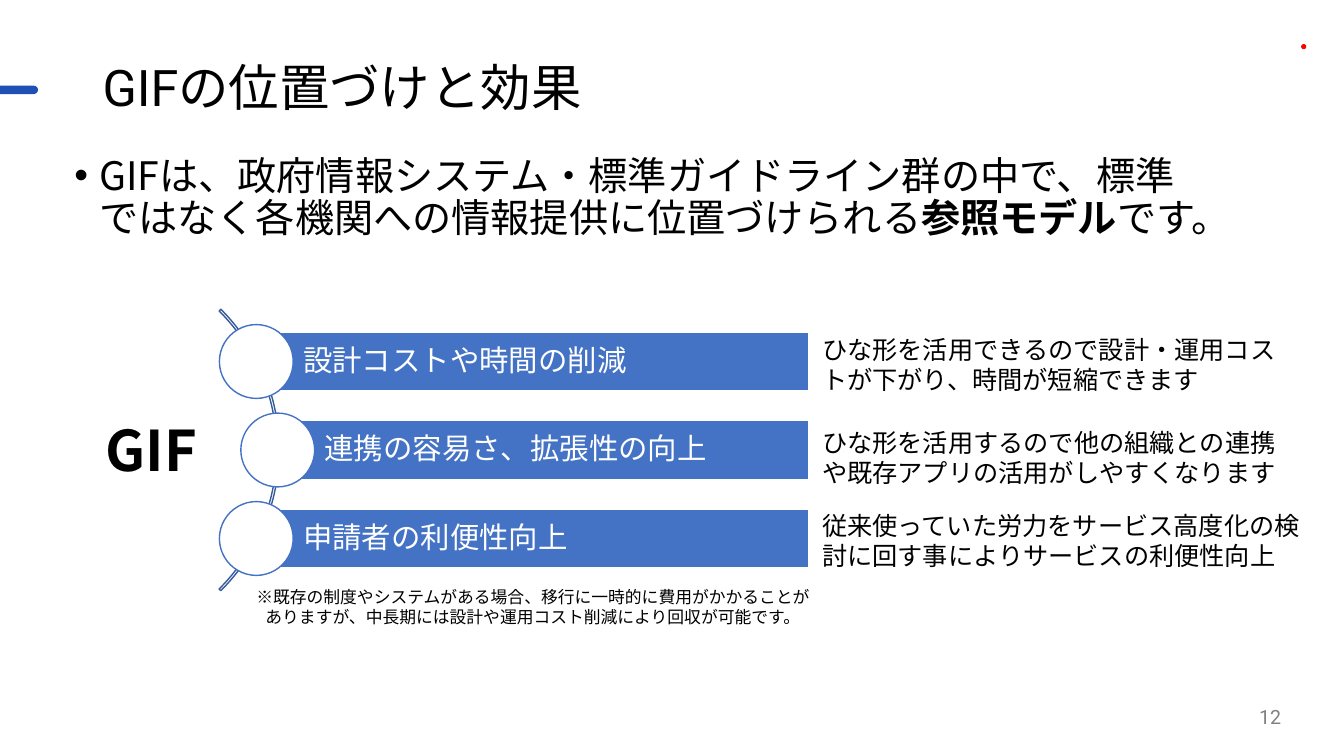
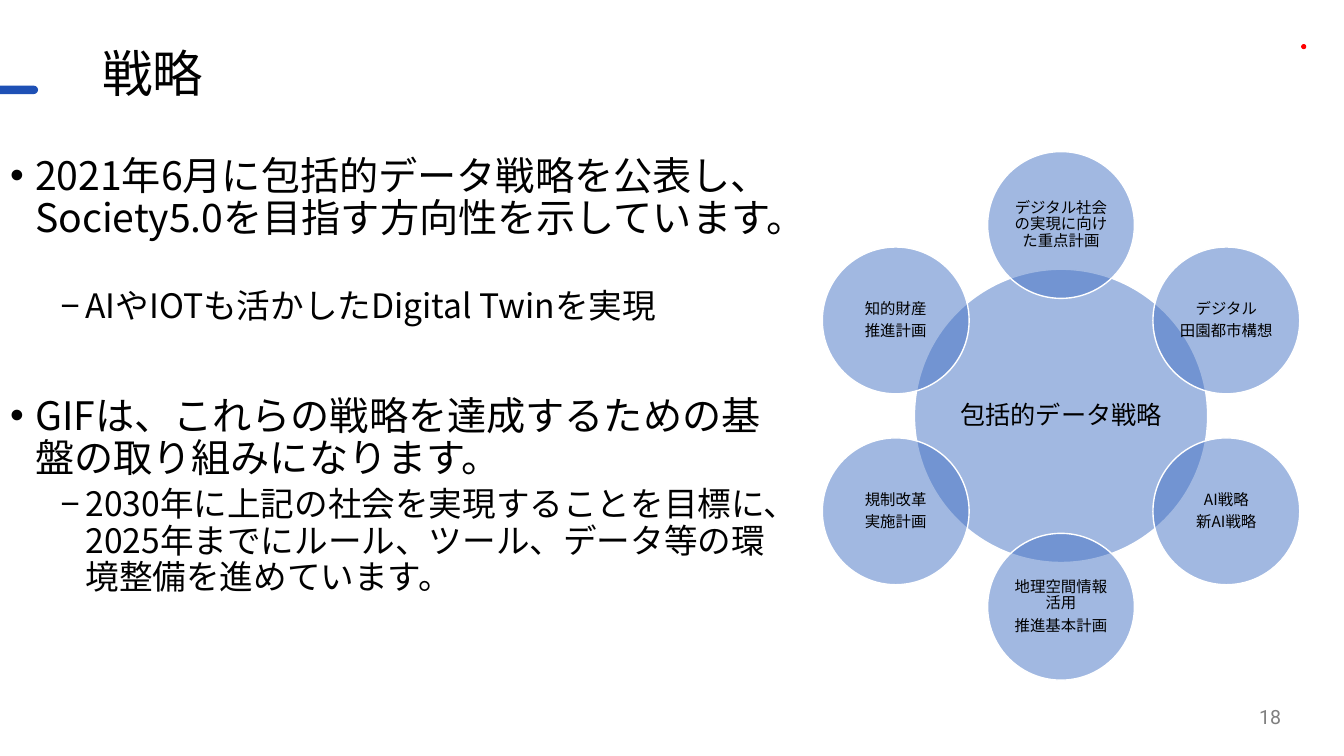
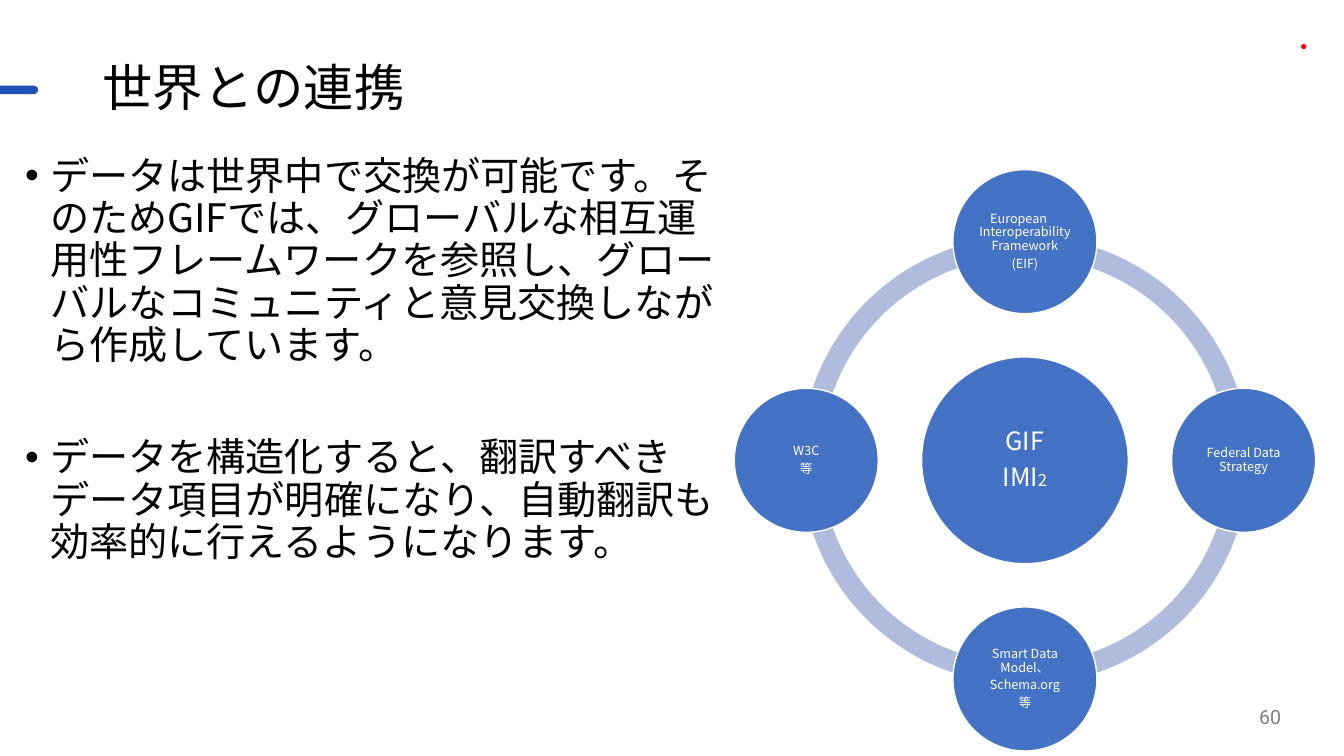
from dataclasses import dataclass
from math import cos, radians, sin

from lxml.etree import SubElement
from pptx import Presentation
from pptx.dml.color import RGBColor
from pptx.enum.lang import MSO_LANGUAGE_ID as Language
from pptx.enum.shapes import MSO_SHAPE as Preset
from pptx.enum.text import MSO_ANCHOR as Anchor, MSO_AUTO_SIZE as AutoSize, PP_ALIGN as Align
from pptx.oxml.ns import qn
from pptx.util import Cm, Pt


@dataclass(frozen=True)
class Theme:
    black: str = "000000"
    white: str = "FFFFFF"
    gray: str = "808080"
    blue: str = "4472C4"
    arc_line: str = "365B9D"
    ring: str = "B0BCDE"
    dash: str = "1E50B5"
    dot: str = "FF0000"
    sans: str = "Noto Sans CJK JP"
    heading: str = "Roboto"
    title: int = 36
    bullet: int = 28
    sub_bullet: int = 24
    page: int = 14
    keyword: int = 40
    bar: int = 21
    hub: int = 18
    note: int = 18
    footnote: int = 12
    subscript: int = 12
    plan: int = 11
    partner: int = 9


theme = Theme()

EFFECTS = {
    "title": "GIFの位置づけと効果",
    "title_top": 1.45,
    "page": "12",
    "body_box": (1.62, 3.81, 29.21, 4.11),
    "bullets": [
        (0, 0, ["GIFは、政府情報システム・標準ガイドライン群の中で、標準ではなく各機関への情報提供に位置づけられる",
                ("参照モデル", {"bold": True}), "です。"]),
    ],
    "keyword": "GIF",
    "benefits": [
        ("設計コストや時間の削減", 6.46, 8.29, 12.07,
         "ひな形を活用できるので設計・運用コストが下がり、時間が短縮できます"),
        ("連携の容易さ、拡張性の向上", 7, 10.64, 12.07,
         "ひな形を活用するので他の組織との連携や既存アプリの活用がしやすくなります"),
        ("申請者の利便性向上", 6.46, 12.73, 12.67,
         "従来使っていた労力をサービス高度化の検討に回す事によりサービスの利便性向上"),
    ],
    "footnote": "※既存の制度やシステムがある場合、移行に一時的に費用がかかることがありますが、"
                "中長期には設計や運用コスト削減により回収が可能です。",
}

STRATEGY = {
    "title": "戦略",
    "title_top": 1.09,
    "page": "18",
    "body_box": (0, 3.81, 19.9, 7.44),
    "bullets": [
        (0, 0, ["2021年6月に包括的データ戦略を公表し、Society5.0を目指す方向性を示しています。"]),
        (1, 35, ["AIやIOTも活かしたDigital Twinを実現"]),
        (0, 50, ["GIFは、これらの戦略を達成するための基盤の取り組みになります。"]),
        (1, 5, ["2030年に上記の社会を実現することを目標に、2025年までにルール、ツール、データ等の環境整備を進めています。"]),
    ],
    "hub": [["包括的データ戦略"]],
    "plans": [
        [["デジタル社会の実現に向けた重点計画"]],
        [["デジタル"], ["田園都市構想"]],
        [["AI戦略"], ["新AI戦略"]],
        [["地理空間情報活用"], ["推進基本計画"]],
        [["規制改革"], ["実施計画"]],
        [["知的財産"], ["推進計画"]],
    ],
}

WORLD = {
    "title": "世界との連携",
    "title_top": 1.45,
    "page": "60",
    "body_box": (0.38, 3.81, 18.03, 5.72),
    "bullets": [
        (0, 0, ["データは世界中で交換が可能です。そのためGIFでは、グローバルな相互運用性フレームワークを参照し、"
                "グローバルなコミュニティと意見交換しながら作成しています。"]),
        (0, 50, ["データを構造化すると、翻訳すべきデータ項目が明確になり、自動翻訳も効率的に行えるようになります。"]),
    ],
    "hub": [["GIF"], ["IMI", ("2", {"size": theme.subscript})]],
    "partners": [
        [["European　Interoperability Framework"], ["(EIF)"]],
        [["Federal Data Strategy"]],
        [["Smart Data Model、"], ["Schema.org"], ["等"]],
        [["W3C"], ["等"]],
    ],
}


def rgb(color):
    return RGBColor.from_string(color)


def add_run(paragraph, text, size, color=theme.black, font_name=theme.sans, bold=False):
    run = paragraph.add_run()
    run.text = text
    font = run.font
    font.size, font.bold, font.name = Pt(size), bold, font_name
    font.color.rgb = rgb(color)
    font.language_id = Language.JAPANESE
    SubElement(run._r.get_or_add_rPr(), qn("a:ea"), typeface=theme.sans)


def add_runs(paragraph, runs, **style):
    for item in runs:
        text, changes = (item, {}) if isinstance(item, str) else item
        add_run(paragraph, text, **{**style, **changes})


def prepare_frame(shape, anchor, insets=None):
    frame = shape.text_frame
    frame.word_wrap = True
    frame.auto_size = AutoSize.NONE
    frame.vertical_anchor = anchor
    if insets:
        frame.margin_left, frame.margin_top, frame.margin_right, frame.margin_bottom = map(Cm, insets)
    return frame


def next_paragraph(frame, index):
    return frame.add_paragraph() if index else frame.paragraphs[0]


def write(shape, paragraphs, size, anchor=Anchor.MIDDLE, insets=None, align=Align.LEFT,
          spacing=0.9, after=0.35, **style):
    frame = prepare_frame(shape, anchor, insets)
    for index, runs in enumerate(paragraphs):
        paragraph = next_paragraph(frame, index)
        paragraph.alignment = align
        paragraph.line_spacing = spacing
        paragraph.space_after = Pt(round(size * after))
        add_runs(paragraph, runs, size=size, **style)
    return frame


def place(shape, box):
    shape.left, shape.top, shape.width, shape.height = map(Cm, box)


def add_text(slide, box, text, size, anchor=Anchor.TOP, **style):
    shape = slide.shapes.add_textbox(*map(Cm, box))
    return write(shape, [[text]], size, anchor, spacing=1, after=0, **style)


def add_figure(slide, preset, box, fill=None, line=None, opacity=None):
    shape = slide.shapes.add_shape(preset, *map(Cm, box))
    shape.shadow.inherit = False
    if fill:
        shape.fill.solid()
        shape.fill.fore_color.rgb = rgb(fill)
    else:
        shape.fill.background()
    if opacity:
        color = shape.element.find(".//" + qn("a:solidFill") + "/" + qn("a:srgbClr"))
        SubElement(color, qn("a:alpha"), val=str(opacity * 1000))
    if line:
        shape.line.color.rgb = rgb(line)
        shape.line.width = Pt(1)
    else:
        shape.line.fill.background()
    return shape


def centered(x, y, diameter):
    return x - diameter / 2, y - diameter / 2, diameter, diameter


def add_arc(slide, center, diameter, start, end, thickness, **look):
    arc = add_figure(slide, Preset.BLOCK_ARC, centered(*center, diameter), **look)
    for index, value in enumerate((start * 0.6, end * 0.6, thickness)):
        arc.adjustments[index] = value


def add_disc(slide, center, diameter, paragraphs, size, inset, color, opacity=None):
    disc = add_figure(slide, Preset.OVAL, centered(*center, diameter), theme.blue, theme.white, opacity)
    write(disc, paragraphs, size, insets=(inset,) * 4, align=Align.CENTER, color=color)


def add_orbit(slide, center, radius, items, **disc):
    for index, paragraphs in enumerate(items):
        angle = radians(360 * index / len(items) - 90)
        spot = center[0] + radius * cos(angle), center[1] + radius * sin(angle)
        add_disc(slide, spot, paragraphs=paragraphs, **disc)


def set_indent(paragraph, left, first):
    properties = paragraph._p.get_or_add_pPr()
    properties.set("marL", str(Cm(left)))
    properties.set("indent", str(Cm(first)))
    return properties


def format_bullet(paragraph, level):
    paragraph.level = level
    properties = set_indent(paragraph, (0.63, 1.9)[level], -0.63)
    SubElement(properties, qn("a:buChar"), char="•−"[level])


def add_slide(presentation, content):
    slide = presentation.slides.add_slide(presentation.slide_layouts[1])
    dash = add_figure(slide, Preset.ROUNDED_RECTANGLE, (-0.25, 2.16, 1.21, 0.21), theme.dash)
    dash.adjustments[0] = 0.5
    add_figure(slide, Preset.OVAL, (32.79, 1.11, 0.13, 0.13), theme.dot)

    title = slide.shapes.title
    place(title, (2.33, content["title_top"], 29.21, 1.65))
    write(title, [[content["title"]]], theme.title, after=0, font_name=theme.heading)

    body = slide.placeholders[1]
    place(body, content["body_box"])
    frame = prepare_frame(body, Anchor.TOP)
    for index, (level, before, runs) in enumerate(content["bullets"]):
        paragraph = next_paragraph(frame, index)
        format_bullet(paragraph, level)
        paragraph.line_spacing = 0.9
        paragraph.space_before = Pt(before)
        add_runs(paragraph, runs, size=(theme.bullet, theme.sub_bullet)[level])

    add_text(slide, (24.92, 17.55, 7.62, 1.02), content["page"], theme.page, Anchor.MIDDLE,
             align=Align.RIGHT, color=theme.gray, font_name=theme.heading)
    return slide


def build_effects(presentation):
    slide = add_slide(presentation, EFFECTS)
    middle, pitch, bar_right, bar_height = 11.34, 2.23, 20.37, 1.49
    add_arc(slide, (2.02, middle), 10.03, 315, 45, 0.006, line=theme.arc_line)
    for index, (label, left, note_top, note_width, note) in enumerate(EFFECTS["benefits"]):
        y = middle + (index - 1) * pitch
        bar = add_figure(slide, Preset.RECTANGLE, (left, y - bar_height / 2, bar_right - left, bar_height),
                         theme.blue, theme.white)
        write(bar, [[label]], theme.bar, insets=(1.18, 0.15, 0.15, 0.15), color=theme.white)
        add_figure(slide, Preset.OVAL, centered(left, y, 1.86), theme.white, theme.blue)
        add_text(slide, (20.47, note_top, note_width, 1.8), note, theme.note)
    add_text(slide, (2.42, 10.34, 3.51, 1.96), EFFECTS["keyword"], theme.keyword, bold=True)
    frame = add_text(slide, (6.21, 14.66, 14.58, 1.27), EFFECTS["footnote"], theme.footnote)
    set_indent(frame.paragraphs[0], 0.23, -0.23)


def build_strategy(presentation):
    slide = add_slide(presentation, STRATEGY)
    center = 26.74, 10.48
    look = {"color": theme.black, "opacity": 50}
    add_disc(slide, center, 7.39, STRATEGY["hub"], theme.hub, 0.02, **look)
    add_orbit(slide, center, 4.81, STRATEGY["plans"], diameter=3.7, size=theme.plan, inset=0.04, **look)


def build_world(presentation):
    slide = add_slide(presentation, WORLD)
    center = 25.83, 11.6
    for start in range(0, 360, 90):
        add_arc(slide, center, 11.3, start, (start + 90) % 360, 0.046, fill=theme.ring)
    add_disc(slide, center, 5.21, WORLD["hub"], theme.hub, 0.08, theme.white)
    add_orbit(slide, center, 5.51, WORLD["partners"], diameter=3.63, size=theme.partner,
              inset=0.03, color=theme.white)


def main():
    presentation = Presentation()
    presentation.slide_width, presentation.slide_height = Cm(33.87), Cm(19.05)
    for build in (build_effects, build_strategy, build_world):
        build(presentation)
    presentation.save("out.pptx")


if __name__ == "__main__":
    main()
